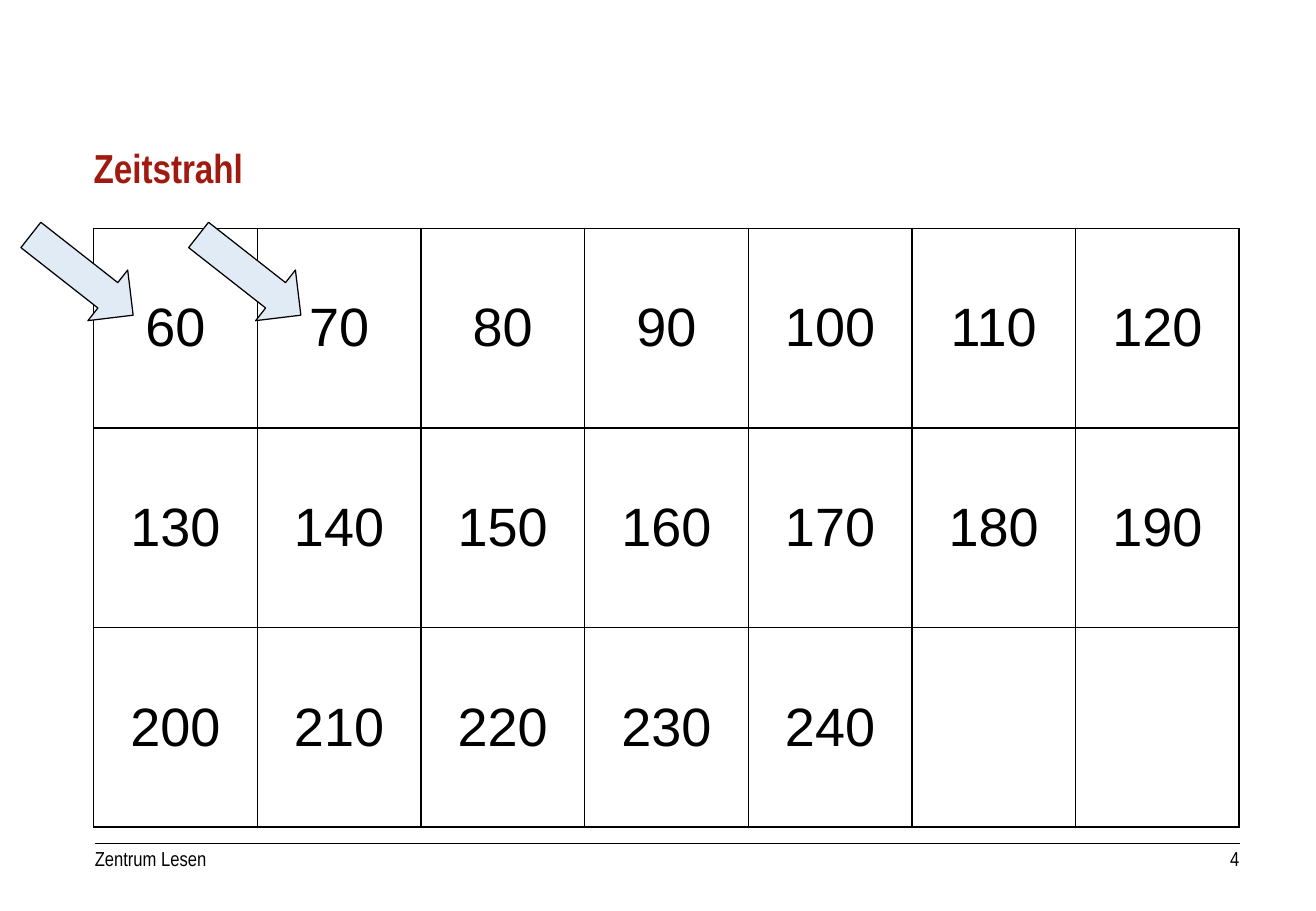
from lxml import etree
from pptx import Presentation
from pptx import util as u
from pptx.dml.color import RGBColor
from pptx.enum import dml, shapes, text
from pptx.oxml.ns import qn

COLOURS = {"ink": "000000", "heading": "A01A10", "arrow": "E1EBF5"}
COLUMNS, ROWS = 7, 3
LEFT, TOP, WIDTH, HEIGHT = 0.77, 1.88, 9.43, 4.93
RIGHT = LEFT + WIDTH
FOOT_TOP, FOOT_HEIGHT = 6.97, 0.2
NUMBERS = range(60, 241, 10)
ARROW_LEFT, ARROW_TOP, ARROW_STEP = 0.14, 2, 1.38


def colour(name):
    """Return a named colour."""
    return RGBColor.from_string(COLOURS[name])


def inches(*lengths):
    """Convert lengths in inches to slide units."""
    return [u.Inches(length) for length in lengths]


def style(paragraph, size, face, ink="ink", bold=False, align=text.PP_ALIGN.LEFT):
    """Format a paragraph and its runs."""
    paragraph.alignment = align
    for run in paragraph.runs:
        run.font.size = u.Pt(size)
        run.font.name = face
        run.font.bold = bold
        run.font.color.rgb = colour(ink)


def add_title(slide, wording):
    """Fill and place the title placeholder."""
    title = slide.shapes.title
    title.left, title.top, title.width, title.height = inches(0.67, 1.17, 9.58, 0.94)
    frame = title.text_frame
    frame.text = wording
    frame.word_wrap = True
    frame.auto_size = text.MSO_AUTO_SIZE.NONE
    frame.vertical_anchor = text.MSO_ANCHOR.TOP
    frame.paragraphs[0].line_spacing = 0.9
    style(frame.paragraphs[0], 24, "Arial Narrow", "heading", bold=True)


def add_borders(cell):
    """Draw a thin line on each side of a cell."""
    properties = cell._tc.get_or_add_tcPr()
    for side in ("a:lnL", "a:lnR", "a:lnT", "a:lnB"):
        line = etree.SubElement(properties, qn(side), w=str(u.Pt(1)))
        fill = etree.SubElement(line, qn("a:solidFill"))
        etree.SubElement(fill, qn("a:srgbClr"), val=COLOURS["ink"])


def add_number_grid(slide):
    """Add the table of numbers, filled row by row."""
    grid = slide.shapes.add_table(ROWS, COLUMNS, *inches(LEFT, TOP, WIDTH, HEIGHT)).table
    grid.first_row = grid.horz_banding = False
    for index, cell in enumerate(grid.iter_cells()):
        add_borders(cell)
        cell.fill.background()
        cell.vertical_anchor = text.MSO_ANCHOR.MIDDLE
        if index < len(NUMBERS):
            cell.text_frame.text = str(NUMBERS[index])
            style(cell.text_frame.paragraphs[0], 32, "Arial", align=text.PP_ALIGN.CENTER)


def add_footer_rule(slide):
    """Add the dotted line above the footer."""
    rule = slide.shapes.add_connector(
        shapes.MSO_CONNECTOR.STRAIGHT, *inches(LEFT + 0.01, 6.94, RIGHT, 6.94))
    rule.line.color.rgb = colour("ink")
    rule.line.width = u.Pt(0.25)
    rule.line.dash_style = dml.MSO_LINE.ROUND_DOT
    etree.SubElement(rule._element.spPr, qn("a:effectLst"))


def add_footer(slide, wording, left, width, anchor, align):
    """Add one footer text."""
    footer = slide.shapes.add_textbox(*inches(left, FOOT_TOP, width, FOOT_HEIGHT))
    frame = footer.text_frame
    frame.word_wrap = True
    frame.margin_left = frame.margin_right = frame.margin_top = frame.margin_bottom = 0
    frame.vertical_anchor = anchor
    frame.text = wording
    style(frame.paragraphs[0], 12, "Arial Narrow", align=align)


def add_arrow(slide, step):
    """Add a slanted arrow that points at a number."""
    arrow = slide.shapes.add_shape(
        shapes.MSO_SHAPE.RIGHT_ARROW,
        *inches(ARROW_LEFT + step * ARROW_STEP, ARROW_TOP, 1.07, 0.53))
    arrow.rotation = 38.1
    arrow.shadow.inherit = False
    arrow.fill.solid()
    arrow.fill.fore_color.rgb = colour("arrow")
    arrow.line.color.rgb = colour("ink")
    arrow.line.width = u.Pt(0.75)


def main():
    """Build and save the slide."""
    deck = Presentation()
    deck.slide_width, deck.slide_height = inches(10.83, 7.5)
    slide = deck.slides.add_slide(deck.slide_layouts.get_by_name("Title Only"))
    add_footer_rule(slide)
    add_title(slide, "Zeitstrahl")
    add_number_grid(slide)
    add_footer(slide, "Zentrum Lesen", LEFT + 0.01, 8.19,
               text.MSO_ANCHOR.BOTTOM, text.PP_ALIGN.LEFT)
    add_footer(slide, "4", RIGHT - 0.94, 0.94,
               text.MSO_ANCHOR.MIDDLE, text.PP_ALIGN.RIGHT)
    for step in range(2):
        add_arrow(slide, step)
    deck.save("out.pptx")


if __name__ == "__main__":
    main()
